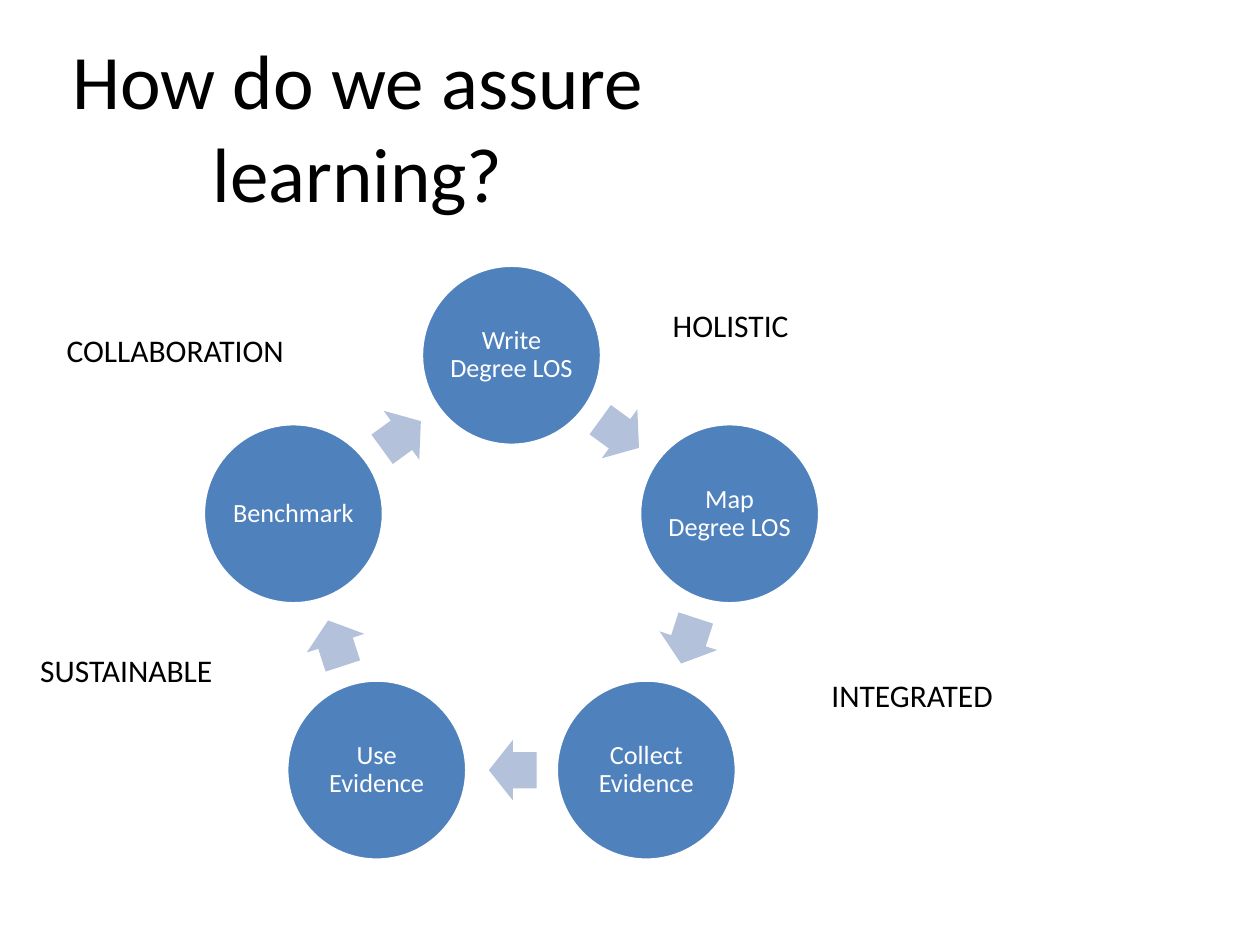
"""Build a slide with a five-step assurance-of-learning cycle."""
import math

from pptx import Presentation
from pptx import util as u
from pptx.dml.color import RGBColor
from pptx.enum import shapes, text

TITLE = "How do we assure learning?"
STEPS = ["Write Degree LOS", "Map Degree LOS", "Collect Evidence",
         "Use Evidence", "Benchmark"]
LABELS = [("HOLISTIC", 5.24, 2.38), ("INTEGRATED", 6.5, 5.32),
          ("COLLABORATION", 0.43, 2.58), ("SUSTAINABLE", 0.22, 5.12)]

BLUE = RGBColor(0x4F, 0x81, 0xBD)
PALE = RGBColor(0xB3, 0xC1, 0xDB)
WHITE = RGBColor(0xFF, 0xFF, 0xFF)
BLACK = RGBColor(0, 0, 0)

CENTER_X, CENTER_Y, RADIUS = 4.06, 4.64, 1.82
DIAMETER = 1.43
ARROW_W, ARROW_H, ARROW_BACK = 0.38, 0.48, 0.01
STEP_ANGLE = 360 / len(STEPS)


def write(sp, words, size, color=BLACK, align=text.PP_ALIGN.LEFT,
          anchor=text.MSO_ANCHOR.TOP, inset=None, spacing=None):
    tf = sp.text_frame
    tf.word_wrap = True
    tf.vertical_anchor = anchor
    if inset is not None:
        tf.margin_left = tf.margin_right = u.Inches(inset)
        tf.margin_top = tf.margin_bottom = u.Inches(inset)
    p = tf.paragraphs[0]
    p.alignment = align
    if spacing:
        p.line_spacing = spacing
    r = p.add_run()
    r.text = words
    r.font.name = "Calibri"
    r.font.size = u.Pt(size)
    r.font.color.rgb = color


def add_centered(s, kind, x, y, w, h, fill):
    sp = s.shapes.add_shape(kind, u.Inches(x - w / 2), u.Inches(y - h / 2),
                            u.Inches(w), u.Inches(h))
    sp.shadow.inherit = False
    sp.fill.solid()
    sp.fill.fore_color.rgb = fill
    sp.line.fill.background()
    return sp


def add_step(s, i, words):
    angle = math.radians(i * STEP_ANGLE)
    sp = add_centered(s, shapes.MSO_SHAPE.OVAL,
                      CENTER_X + RADIUS * math.sin(angle),
                      CENTER_Y - RADIUS * math.cos(angle),
                      DIAMETER, DIAMETER, BLUE)
    sp.line.color.rgb = WHITE
    sp.line.width = u.Pt(2)
    write(sp, words, 15, WHITE, text.PP_ALIGN.CENTER,
          text.MSO_ANCHOR.MIDDLE, inset=0.02, spacing=0.9)


def add_arrow(s, i):
    turn = (i + 0.5) * STEP_ANGLE
    angle = math.radians(turn)
    reach = RADIUS * math.cos(math.radians(STEP_ANGLE / 2))
    sp = add_centered(
        s, shapes.MSO_SHAPE.RIGHT_ARROW,
        CENTER_X + reach * math.sin(angle) - ARROW_BACK * math.cos(angle),
        CENTER_Y - reach * math.cos(angle) - ARROW_BACK * math.sin(angle),
        ARROW_W, ARROW_H, PALE)
    sp.adjustments[0], sp.adjustments[1] = 0.6, 0.5
    sp.rotation = turn


def main():
    prs = Presentation()
    prs.slide_width, prs.slide_height = u.Inches(10), u.Inches(7.5)
    s = prs.slides.add_slide(prs.slide_layouts[5])
    title = s.shapes.title
    title.left, title.top = u.Inches(0.2), u.Inches(0.21)
    title.width, title.height = u.Inches(5.28), u.Inches(1.58)
    write(title, TITLE, 44, align=text.PP_ALIGN.CENTER)
    for i, words in enumerate(STEPS):
        add_step(s, i, words)
        add_arrow(s, i)
    for words, x, y in LABELS:
        box = s.shapes.add_textbox(u.Inches(x), u.Inches(y),
                                   u.Inches(2.68), u.Inches(0.4))
        write(box, words, 18)
    prs.save("out.pptx")


if __name__ == "__main__":
    main()
